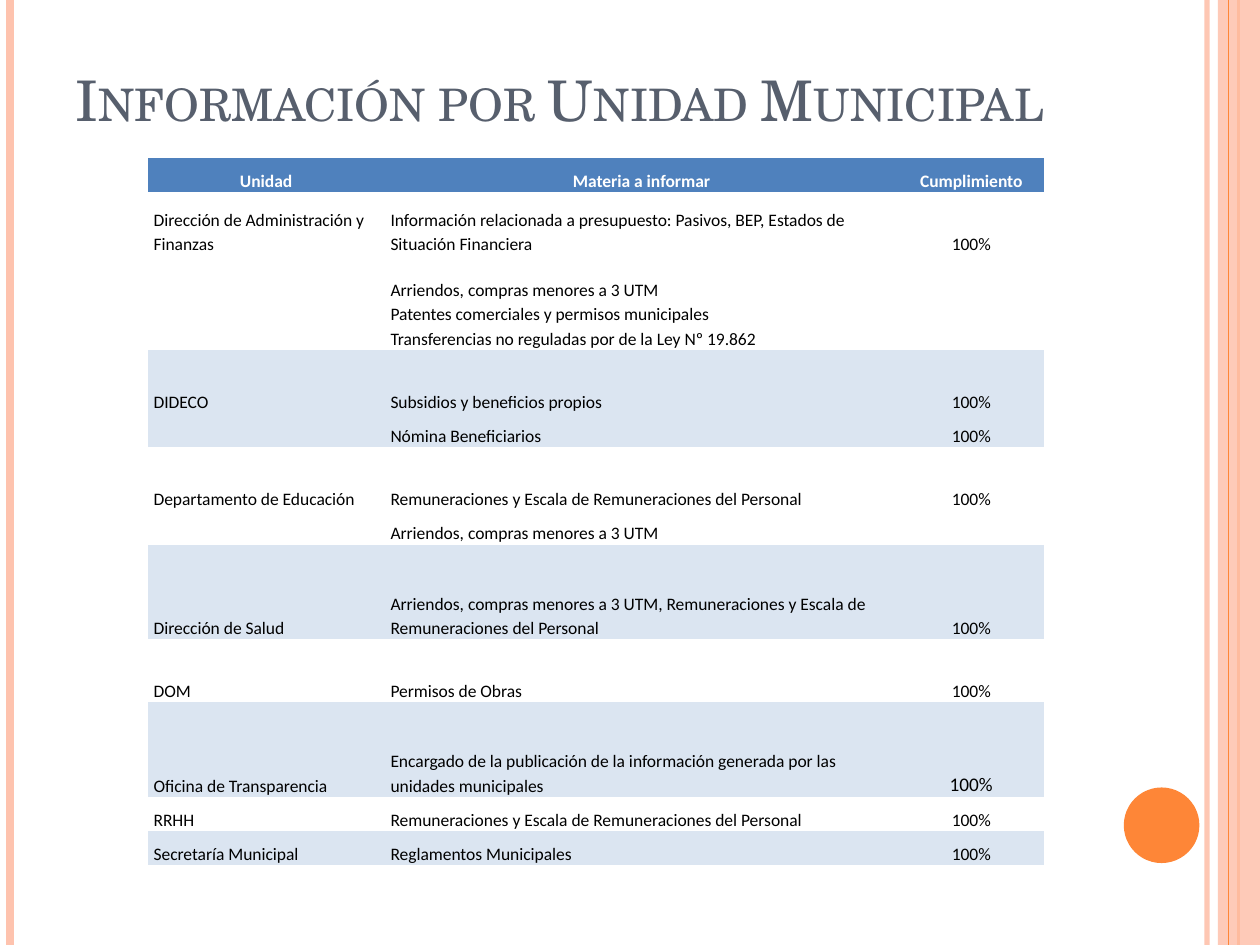
from lxml import etree
from pptx import Presentation
from pptx import util as u
from pptx.dml import color
from pptx.enum import shapes, text
from pptx.oxml import ns

COLORS = {"peach": "FEC3AE", "orange": "FE8637", "slate": "575F6D", "header": "4F81BD",
          "band": "DBE5F1", "white": "FFFFFF", "black": "000000"}
WIDTH, HEIGHT = 720, 540

# Content: one group of rows per unit, each row being (lines of matter, compliance, height)
TITLE = "Información por Unidad Municipal"
HEADINGS = ("Unidad", "Materia a informar", "Cumplimiento")
LOW, MIDDLE, TALL = 19.6, 36.1, 54
UNITS = [
    ("Dirección de Administración y Finanzas", [
        (["Información relacionada a presupuesto: Pasivos, BEP, Estados de Situación Financiera"],
         "100%", MIDDLE),
        (["Arriendos, compras menores a 3 UTM", "Patentes comerciales y permisos municipales",
          "Transferencias no reguladas por de la Ley Nº 19.862"], "", TALL)]),
    ("DIDECO", [(["Subsidios y beneficios propios"], "100%", MIDDLE),
                (["Nómina Beneficiarios"], "100%", LOW)]),
    ("Departamento de Educación", [
        (["Remuneraciones y Escala de Remuneraciones del Personal"], "100%", MIDDLE),
        (["Arriendos, compras menores a 3 UTM"], "", LOW)]),
    ("Dirección de Salud", [
        (["Arriendos, compras menores a 3 UTM, Remuneraciones y Escala de "
          "Remuneraciones del Personal"], "100%", TALL)]),
    ("DOM", [(["Permisos de Obras"], "100%", MIDDLE)]),
    ("Oficina de Transparencia", [
        (["Encargado de la publicación de la información generada por las "
          "unidades municipales"], "100%", TALL)]),
    ("RRHH", [(["Remuneraciones y Escala de Remuneraciones del Personal"], "100%", LOW)]),
    ("Secretaría Municipal", [(["Reglamentos Municipales"], "100%", LOW)]),
]
LARGER_UNIT = "Oficina de Transparencia"  # its compliance is set one point larger
COLUMNS = (135.4, 293.5, 83.5)
TABLE_LEFT, TABLE_TOP = 84.4, 90.2
PLAIN_TABLE = "{2D5ABB26-0587-4C30-8999-92F81FD0307C}"  # no style, no grid

# Decoration: (x, line width, colour, opacity in percent)
RULES_BEHIND = [(689.8, 3, "peach", 93), (5.9, 4.5, "peach", 100), (707.8, 1.5, "orange", 100)]
RULES_FRONT = [(702, 0.75, "orange", 100)]


def rgb(name):
    return color.RGBColor.from_string(COLORS[name])


def set_opacity(fill, percent):
    if percent < 100:
        node = fill._xPr.find(".//" + ns.qn("a:srgbClr"))
        etree.SubElement(node, ns.qn("a:alpha")).set("val", str(percent * 1000))


def add_rule(page, x, width, tint, opacity):
    rule = page.shapes.add_connector(shapes.MSO_CONNECTOR.STRAIGHT,
                                     u.Pt(x), 0, u.Pt(x), u.Pt(HEIGHT))
    rule.line.width = u.Pt(width)
    rule.line.color.rgb = rgb(tint)
    set_opacity(rule.line.fill, opacity)
    etree.SubElement(rule._element.spPr, ns.qn("a:effectLst"))


def add_plain_shape(page, kind, place, tint, opacity=100):
    shape = page.shapes.add_shape(kind, *map(u.Pt, place))
    shape.shadow.inherit = False
    shape.line.fill.background()
    shape.fill.solid()
    shape.fill.fore_color.rgb = rgb(tint)
    set_opacity(shape.fill, opacity)


def write(para, words, *, size, font, tint, bold=False, small_caps=False,
          align=text.PP_ALIGN.LEFT, spacing=1.0):
    para.alignment = align
    para.line_spacing = spacing
    if not words:  # an empty cell must not force its row taller
        para._p.get_or_add_endParaRPr().set("sz", str(size * 100))
        return
    span = para.add_run()
    span.text = words
    span.font.size, span.font.name, span.font.bold = u.Pt(size), font, bold
    span.font.color.rgb = rgb(tint)
    if small_caps:
        span.font._element.set("cap", "small")


def fill_cell(cell, lines, *, fill, **style):
    cell.margin_left = cell.margin_right = u.Pt(3.4)
    cell.margin_top = cell.margin_bottom = 0
    cell.vertical_anchor = text.MSO_ANCHOR.BOTTOM
    if fill:
        cell.fill.solid()
        cell.fill.fore_color.rgb = rgb(fill)
    else:
        cell.fill.background()
    frame = cell.text_frame
    for number, line in enumerate(lines):
        para = frame.add_paragraph() if number else frame.paragraphs[0]
        write(para, line, font="Calibri", spacing=1.15, **style)


def add_units_table(page):
    heights = [LOW] + [row[2] for _, rows in UNITS for row in rows]
    frame = page.shapes.add_table(len(heights), len(COLUMNS), u.Pt(TABLE_LEFT), u.Pt(TABLE_TOP),
                                  u.Pt(sum(COLUMNS)), u.Pt(sum(heights)))
    table = frame.table
    table.first_row = table.horz_banding = False
    table._tbl.tblPr.find(ns.qn("a:tableStyleId")).text = PLAIN_TABLE
    for column, width in zip(table.columns, COLUMNS):
        column.width = u.Pt(width)
    for row, height in zip(table.rows, heights):
        row.height = u.Pt(height)

    center = text.PP_ALIGN.CENTER
    for column, heading in enumerate(HEADINGS):
        fill_cell(table.cell(0, column), [heading], fill="header", size=10, tint="white",
                  bold=True, align=center)
    index = 1
    for group, (unit, rows) in enumerate(UNITS):
        fill = "band" if group % 2 else None
        for number, (matter, compliance, _) in enumerate(rows):
            unit_cell, matter_cell, compliance_cell = table.rows[index].cells
            fill_cell(unit_cell, ["" if number else unit], fill=fill, size=10, tint="black")
            fill_cell(matter_cell, matter, fill=fill, size=10, tint="black")
            fill_cell(compliance_cell, [compliance], fill=fill, tint="black", align=center,
                      size=11 if unit == LARGER_UNIT else 10)
            index += 1


def main():
    deck = Presentation()
    deck.slide_width, deck.slide_height = u.Pt(WIDTH), u.Pt(HEIGHT)
    page = deck.slides.add_slide(deck.slide_layouts[6])

    # Side rules, band and disc
    for rule in RULES_BEHIND:
        add_rule(page, *rule)
    add_plain_shape(page, shapes.MSO_SHAPE.RECTANGLE, (696, 0, 24, HEIGHT), "peach", 87)
    for rule in RULES_FRONT:
        add_rule(page, *rule)
    add_plain_shape(page, shapes.MSO_SHAPE.OVAL, (642.2, 450, 43.2, 43.2), "orange")

    # Title, raised above the table by its bottom margin
    box = page.shapes.add_textbox(u.Pt(36), u.Pt(21.6), u.Pt(588), u.Pt(90))
    frame = box.text_frame
    frame.word_wrap = True
    frame.vertical_anchor = text.MSO_ANCHOR.BOTTOM
    frame.margin_bottom = u.Pt(36)
    write(frame.paragraphs[0], TITLE, size=32, font="TeX Gyre Schola", tint="slate",
          small_caps=True)

    add_units_table(page)
    deck.save("out.pptx")


if __name__ == "__main__":
    main()
